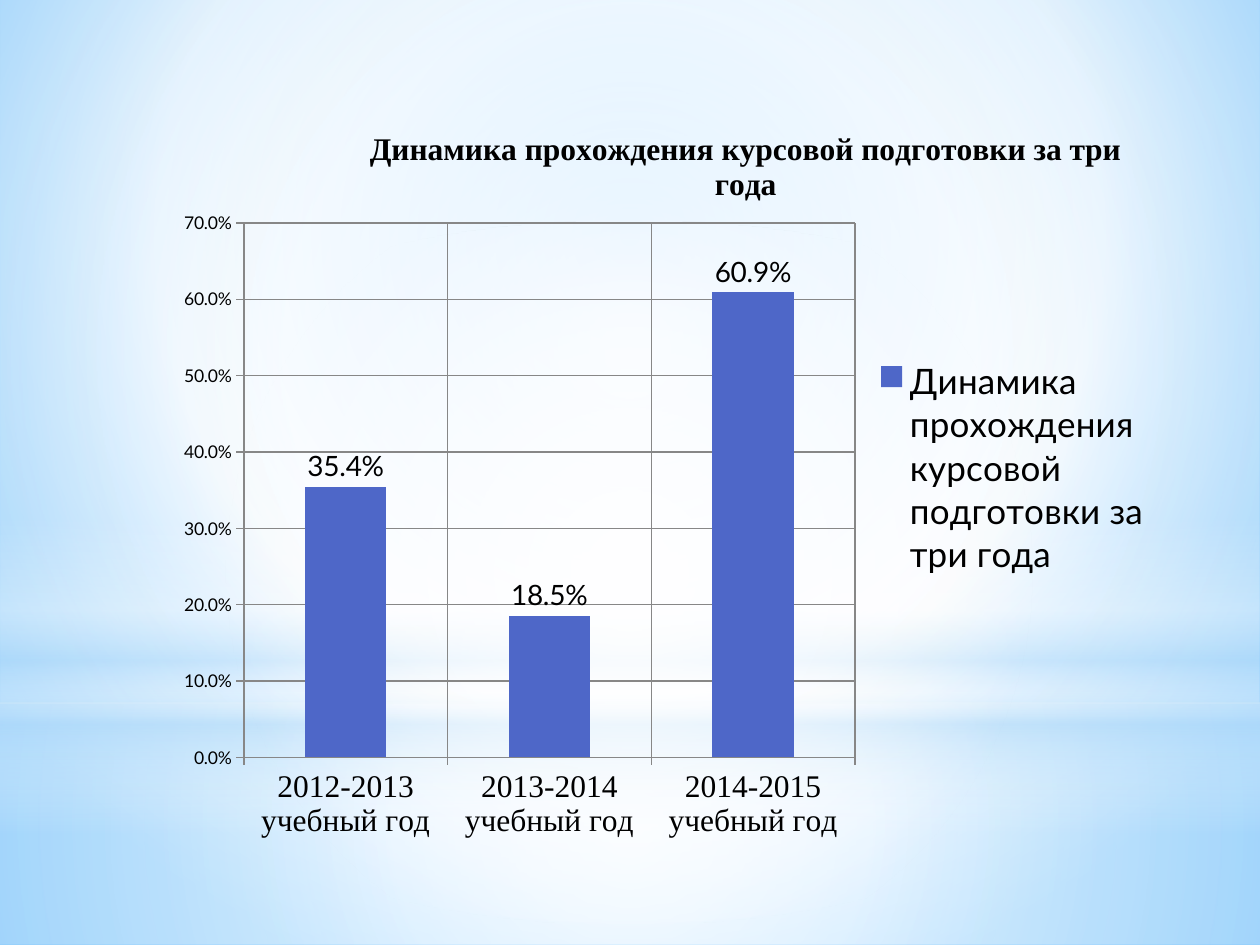
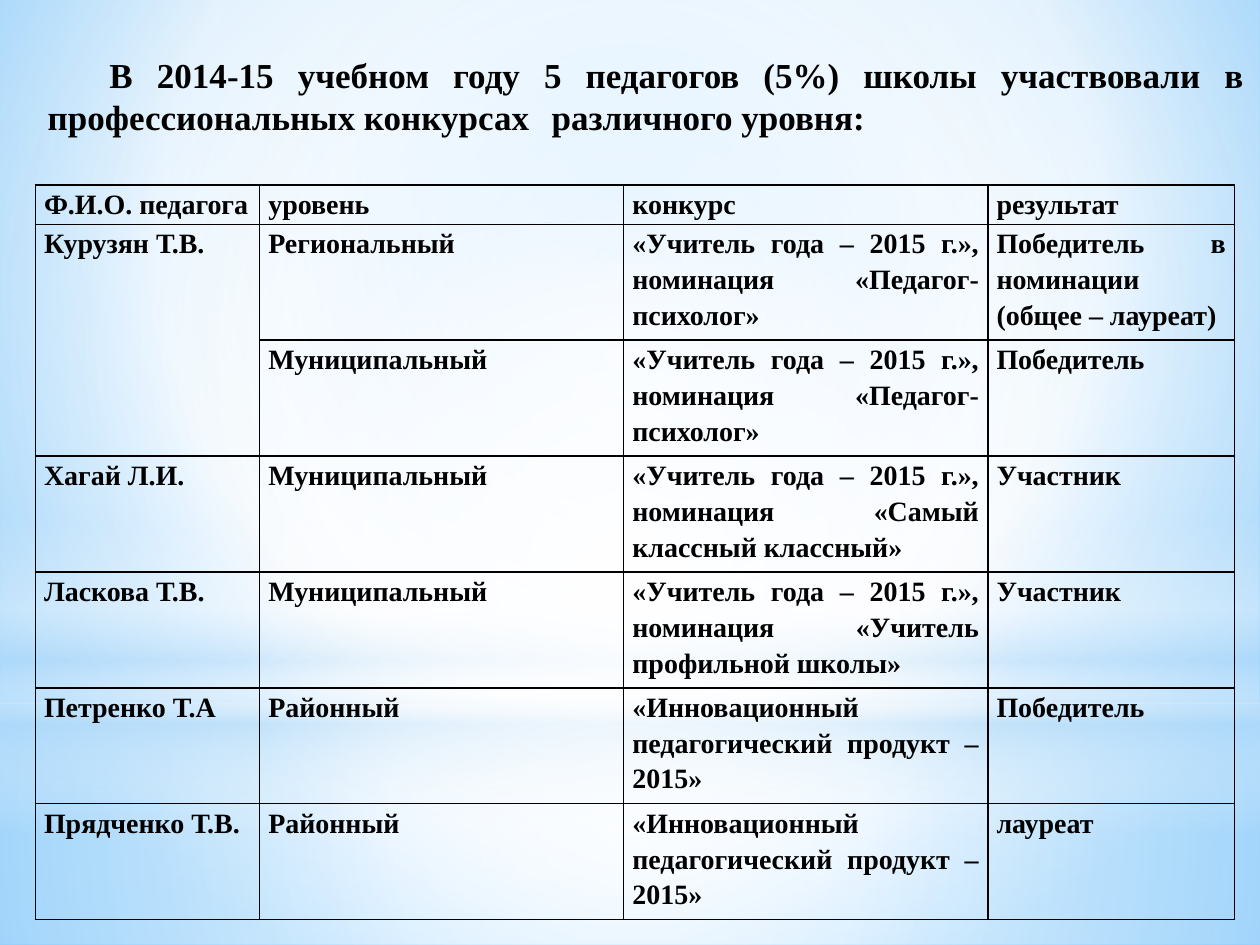
import lxml.etree
import pptx
import pptx.chart.data
import pptx.dml.color
import pptx.enum.chart
import pptx.enum.shapes
import pptx.enum.text
import pptx.oxml.ns
import pptx.util

Inches = pptx.util.Inches
qn = pptx.oxml.ns.qn

COLORS = {
    "text": "000000", "bar": "4E67C8", "grid": "878787", "white": "FFFFFF",
    "haze": "B4DCFA", "sky": "9ED5FF", "deep": "5BB9FF",
}
SERIF = "Times New Roman"
SANS = "Lato"
CENTER = (50, 50, 50, 50)

BACKDROP = [(0, "sky", 100), (60, "white", 100), (100, "deep", 100)]
BANDS = [
    ("RECTANGLE", 5.58, 1.92, [(0, "white", 91), (37, "white", 76), (100, "haze", 79)], CENTER),
    ("RECTANGLE", 0, 5.58, [(0, "white", 89), (48, "white", 62), (100, "haze", 79)], CENTER),
    ("RECTANGLE", 4.12, 2.5, [(0, "white", 0), (29, "white", 30), (45, "haze", 40),
                              (55, "white", 26), (65, "haze", 60), (100, "white", 0)], None),
    ("OVAL", 1.75, 5.58, [(0, "white", 100), (56, "white", 0)], CENTER),
]

COURSES = "Динамика прохождения курсовой подготовки за три года"
COURSE_SHARES = {
    "2012-2013 учебный год": 0.354,
    "2013-2014 учебный год": 0.185,
    "2014-2015 учебный год": 0.609,
}

CONTEST_TITLE = ("В 2014-15 учебном году 5 педагогов (5%) школы участвовали в "
                 "профессиональных конкурсах\tразличного уровня:")
TEACHER_OF_YEAR = "«Учитель года – 2015 г.», номинация "
PSYCHOLOGIST = TEACHER_OF_YEAR + "«Педагог-психолог»"
INNOVATION = "«Инновационный педагогический продукт – 2015»"
CONTESTS = [
    ("Ф.И.О. педагога", "уровень", "конкурс", "результат"),
    ("Курузян Т.В.", "Региональный", PSYCHOLOGIST, "Победитель в номинации\n(общее – лауреат)"),
    ("", "Муниципальный", PSYCHOLOGIST, "Победитель"),
    ("Хагай Л.И.", "Муниципальный", TEACHER_OF_YEAR + "«Самый классный классный»", "Участник"),
    ("Ласкова Т.В.", "Муниципальный", TEACHER_OF_YEAR + "«Учитель профильной школы»", "Участник"),
    ("Петренко Т.А", "Районный", INNOVATION, "Победитель"),
    ("Прядченко Т.В.", "Районный", INNOVATION, "лауреат"),
]


def rgb(name):
    return pptx.dml.color.RGBColor.from_string(COLORS[name])


def add_node(parent, tag, **attributes):
    return lxml.etree.SubElement(parent, qn(tag), {key: str(value) for key, value in attributes.items()})


def paint_gradient(owner, fill, stops, focus=None):
    fill.gradient()
    gradient = next(owner.element.iter(qn("a:gradFill")))
    for child in list(gradient):
        gradient.remove(child)
    stop_list = add_node(gradient, "a:gsLst")
    for position, color, opacity in stops:
        stop = add_node(stop_list, "a:gs", pos=position * 1000)
        shade = add_node(stop, "a:srgbClr", val=COLORS[color])
        if opacity < 100:
            add_node(shade, "a:alpha", val=opacity * 1000)
    if focus:
        circle = add_node(gradient, "a:path", path="circle")
        sides = {side: value * 1000 for side, value in zip("ltrb", focus)}
        add_node(circle, "a:fillToRect", **sides)
    else:
        add_node(gradient, "a:lin", ang=90 * 60000, scaled=0)


def add_page(deck):
    page = deck.slides.add_slide(deck.slide_layouts[6])
    paint_gradient(page, page.background.fill, BACKDROP, (20, 10, 20, 60))
    for kind, top, height, stops, focus in BANDS:
        band = page.shapes.add_shape(pptx.enum.shapes.MSO_SHAPE[kind],
                                     0, Inches(top), deck.slide_width, Inches(height))
        band.shadow.inherit = False
        band.line.fill.background()
        paint_gradient(band, band.fill, stops, focus)
    return page


def style_font(font, size, name=SERIF, bold=False):
    font.name = name
    font.size = pptx.util.Pt(size)
    font.bold = bold
    font.color.rgb = rgb("text")


def write_text(frame, text, size=16, spacing=None):
    for index, line in enumerate(text.split("\n")):
        para = frame.add_paragraph() if index else frame.paragraphs[0]
        para.alignment = pptx.enum.text.PP_ALIGN.JUSTIFY
        para.line_spacing = spacing
        span = para.add_run()
        span.text = line
        style_font(span.font, size, bold=True)


def add_heading(page, text):
    box = page.shapes.add_textbox(Inches(0.28), Inches(0.37), Inches(9.69), Inches(0.77))
    frame = box.text_frame
    frame.word_wrap = True
    frame.auto_size = pptx.enum.text.MSO_AUTO_SIZE.SHAPE_TO_FIT_TEXT
    frame.vertical_anchor = pptx.enum.text.MSO_ANCHOR.MIDDLE
    write_text(frame, text, size=20)
    properties = frame.paragraphs[0]._p.get_or_add_pPr()
    properties.set("indent", str(Inches(0.49)))
    add_node(add_node(properties, "a:tabLst"), "a:tab", pos=Inches(4.17), algn="l")


def place_chart_part(part, index, inner=False, **place):
    for old in part.findall(qn("c:layout")):
        part.remove(old)
    layout = lxml.etree.Element(qn("c:layout"))
    part.insert(index, layout)
    manual = add_node(layout, "c:manualLayout")
    if inner:
        add_node(manual, "c:layoutTarget", val="inner")
    for mode in ("c:xMode", "c:yMode"):
        add_node(manual, mode, val="edge")
    for side, value in place.items():
        add_node(manual, "c:" + side, val=value)


def style_axis(axis):
    axis.has_major_gridlines = True
    axis.major_tick_mark = pptx.enum.chart.XL_TICK_MARK.OUTSIDE
    for line in (axis.format.line, axis.major_gridlines.format.line):
        line.color.rgb = rgb("grid")
        line.width = pptx.util.Pt(0.75)


def add_column_chart(page, title, shares):
    data = pptx.chart.data.CategoryChartData(number_format="0.0%")
    data.categories = list(shares)
    data.add_series(title, list(shares.values()))
    chart = page.shapes.add_chart(pptx.enum.chart.XL_CHART_TYPE.COLUMN_CLUSTERED, Inches(1.3),
                                  Inches(0.68), Inches(7.95), Inches(6.06), data).chart
    style_font(chart.font, 10, SANS)

    chart.has_title = True
    chart.chart_title.include_in_layout = False
    heading = chart.chart_title.text_frame.paragraphs[0].add_run()
    heading.text = title
    style_font(heading.font, 18, bold=True)
    place_chart_part(next(chart.element.iter(qn("c:title"))), 1, x=0.2, y=0.05)
    place_chart_part(next(chart.element.iter(qn("c:plotArea"))), 0, inner=True,
                     x=0.08, y=0.18, w=0.61, h=0.7)

    chart.has_legend = True
    chart.legend.position = pptx.enum.chart.XL_LEGEND_POSITION.RIGHT
    chart.legend.include_in_layout = False
    style_font(chart.legend.font, 20, SANS)

    style_axis(chart.category_axis)
    style_font(chart.category_axis.tick_labels.font, 18)
    style_axis(chart.value_axis)
    chart.value_axis.tick_labels.number_format = "0.0%"
    chart.value_axis.tick_labels.number_format_is_linked = False

    plot = chart.plots[0]
    plot.gap_width = 150
    plot.vary_by_categories = False
    fill = plot.series[0].format.fill
    fill.solid()
    fill.fore_color.rgb = rgb("bar")
    labels = plot.series[0].data_labels
    labels.show_value = True
    labels.number_format = "0.0%"
    labels.number_format_is_linked = False
    labels.position = pptx.enum.chart.XL_LABEL_POSITION.OUTSIDE_END
    style_font(labels.font, 16, SANS)


def add_borders(cell):
    properties = cell._tc.get_or_add_tcPr()
    for index, side in enumerate("LRTB"):
        line = lxml.etree.Element(qn("a:ln" + side), {"w": str(pptx.util.Pt(1))})
        add_node(add_node(line, "a:solidFill"), "a:srgbClr", val=COLORS["text"])
        properties.insert(index, line)


def add_contest_table(page, rows):
    widths = [1.78, 2.89, 2.89, 1.96]
    table = page.shapes.add_table(len(rows), len(widths), Inches(0.28), Inches(1.47),
                                  Inches(sum(widths)), Inches(5.83)).table
    table.first_row = False
    table.horz_banding = False
    for column, width in zip(table.columns, widths):
        column.width = Inches(width)
    for row_index, texts in enumerate(rows):
        table.rows[row_index].height = Inches(0.92 if row_index else 0.31)
        for column_index, text in enumerate(texts):
            cell = table.cell(row_index, column_index)
            cell.margin_left = cell.margin_right = Inches(0.07)
            cell.margin_top = cell.margin_bottom = 0
            cell.fill.background()
            add_borders(cell)
            if text:
                write_text(cell.text_frame, text, spacing=1.15)
    table.cell(1, 0).merge(table.cell(2, 0))


def main():
    deck = pptx.Presentation()
    deck.slide_width = Inches(10)
    deck.slide_height = Inches(7.5)

    add_column_chart(add_page(deck), COURSES, COURSE_SHARES)

    contest_page = add_page(deck)
    add_heading(contest_page, CONTEST_TITLE)
    add_contest_table(contest_page, CONTESTS)

    deck.save("out.pptx")


if __name__ == "__main__":
    main()
